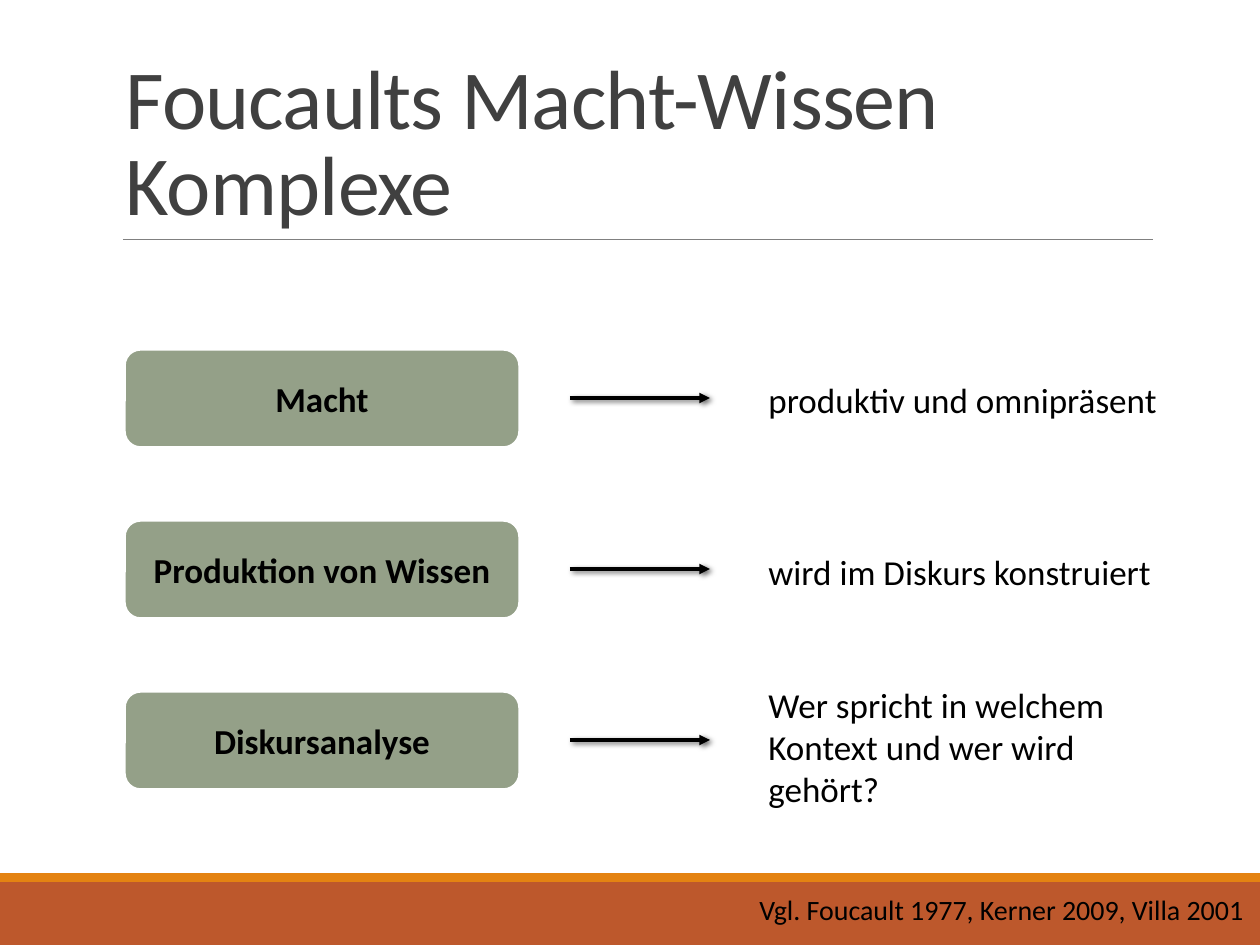
"""Build a slide on Foucault's complexes of power and knowledge."""
import pptx
import pptx.dml.color
import pptx.enum.shapes
import pptx.enum.text
import pptx.oxml
import pptx.oxml.ns
import pptx.util

RGBColor = pptx.dml.color.RGBColor
MSO_SHAPE = pptx.enum.shapes.MSO_SHAPE
ANCHOR = pptx.enum.text.MSO_ANCHOR
ALIGN = pptx.enum.text.PP_ALIGN
AUTO_SIZE = pptx.enum.text.MSO_AUTO_SIZE

BLACK = RGBColor(0x00, 0x00, 0x00)
WHITE = RGBColor(0xFF, 0xFF, 0xFF)
GREY = RGBColor(0x80, 0x80, 0x80)
DARK = RGBColor(0x40, 0x40, 0x40)
SAGE = RGBColor(0x94, 0xA0, 0x88)
RUST = RGBColor(0xBD, 0x58, 0x2C)
ORANGE = RGBColor(0xE4, 0x83, 0x12)

FONT = "Calibri"
SCALE = 914400 / 126
ROW_TOP, ROW_PITCH, BOX_HEIGHT = 349, 171, 99
ROWS = [
    ("Macht", "produktiv und omnipräsent", (756, 372, 420, 55)),
    ("Produktion von Wissen", "wird im Diskurs konstruiert", (756, 544, 420, 55)),
    ("Diskursanalyse", "Wer spricht in welchem Kontext und wer wird gehört?",
     (756, 677, 397, 140)),
]
NO_EFFECT = f"<a:effectLst {pptx.oxml.ns.nsdecls('a')}/>"
SHADOW = (
    f"<a:effectLst {pptx.oxml.ns.nsdecls('a')}>"
    '<a:outerShdw blurRad="38100" dist="25400" dir="2700000" rotWithShape="0">'
    '<a:srgbClr val="000000"><a:alpha val="60000"/></a:srgbClr>'
    "</a:outerShdw></a:effectLst>"
)
ARROWHEAD = f"<a:tailEnd {pptx.oxml.ns.nsdecls('a')} type='triangle'/>"


def px(*lengths):
    """Turn pixel lengths into EMU."""
    return [pptx.util.Emu(round(n * SCALE)) for n in lengths]


def write(tf, text, size=20, color=BLACK, bold=False, align=ALIGN.LEFT,
          anchor=ANCHOR.TOP, line_spacing=None, tracking=None):
    """Fill a text frame with one formatted paragraph."""
    tf.word_wrap = True
    tf.auto_size = AUTO_SIZE.NONE
    tf.vertical_anchor = anchor
    p = tf.paragraphs[0]
    p.alignment = align
    p.line_spacing = line_spacing
    r = p.add_run()
    r.text = text
    r.font.name = FONT
    r.font.size = pptx.util.Pt(size)
    r.font.bold = bold
    r.font.color.rgb = color
    if tracking is not None:
        r.font._element.set("spc", str(round(tracking * 100)))


class Deck:
    """Hold the presentation and its current slide."""

    def __init__(self, width, height):
        """Create the presentation with one title slide."""
        self.prs = pptx.Presentation()
        self.prs.slide_width, self.prs.slide_height = px(width, height)
        self.s = self.prs.slides.add_slide(self.prs.slide_layouts[5])

    def title(self, text, *box):
        """Place the title placeholder."""
        sp = self.s.shapes.title
        sp.left, sp.top, sp.width, sp.height = px(*box)
        write(sp.text_frame, text, size=48, color=DARK, anchor=ANCHOR.BOTTOM,
              line_spacing=0.85, tracking=-0.5)

    def shape(self, kind, fill, *box, line=None):
        """Add a filled preset shape."""
        sp = self.s.shapes.add_shape(kind, *px(*box))
        sp.shadow.inherit = False
        sp.fill.solid()
        sp.fill.fore_color.rgb = fill
        if line is None:
            sp.line.fill.background()
        else:
            sp.line.color.rgb = line
            sp.line.width = pptx.util.Pt(2)
        return sp

    def band(self, fill, *box):
        """Add a plain footer band."""
        self.shape(MSO_SHAPE.RECTANGLE, fill, *box)

    def concept(self, text, *box):
        """Add a rounded box with a centred bold label."""
        sp = self.shape(MSO_SHAPE.ROUNDED_RECTANGLE, SAGE, *box, line=WHITE)
        write(sp.text_frame, text, bold=True, align=ALIGN.CENTER,
              anchor=ANCHOR.MIDDLE)

    def rule(self, x1, x2, y, color=GREY, width=0.5, effect=NO_EFFECT):
        """Add a horizontal line."""
        line = self.s.shapes.add_connector(
            pptx.enum.shapes.MSO_CONNECTOR.STRAIGHT, *px(x1, y, x2, y))
        line.line.color.rgb = color
        line.line.width = pptx.util.Pt(width)
        line._element.spPr.append(pptx.oxml.parse_xml(effect))
        return line

    def arrow(self, x1, x2, y):
        """Add a shadowed horizontal arrow."""
        line = self.rule(x1, x2, y, color=BLACK, width=2, effect=SHADOW)
        line.line._get_or_add_ln().append(pptx.oxml.parse_xml(ARROWHEAD))

    def text(self, text, *box, size=20):
        """Add a text box."""
        sp = self.s.shapes.add_textbox(*px(*box))
        write(sp.text_frame, text, size=size)


def main():
    """Build and save the slide."""
    deck = Deck(1260, 945)
    deck.band(RUST, 0, 882, 1260, 63)
    deck.band(ORANGE, 0, 873, 1260, 9)
    deck.rule(123, 1153, 239)
    deck.title("Foucaults Macht-Wissen Komplexe", 113, 39, 1040, 200)
    for i, (concept, meaning, box) in enumerate(ROWS):
        top = ROW_TOP + i * ROW_PITCH
        deck.concept(concept, 124, top, 396, BOX_HEIGHT)
        deck.arrow(570, 710, top + BOX_HEIGHT // 2)
        deck.text(meaning, *box)
    deck.text("Vgl. Foucault 1977, Kerner 2009, Villa 2001",
              747, 886, 515, 47, size=16)
    deck.prs.save("out.pptx")


if __name__ == "__main__":
    main()
